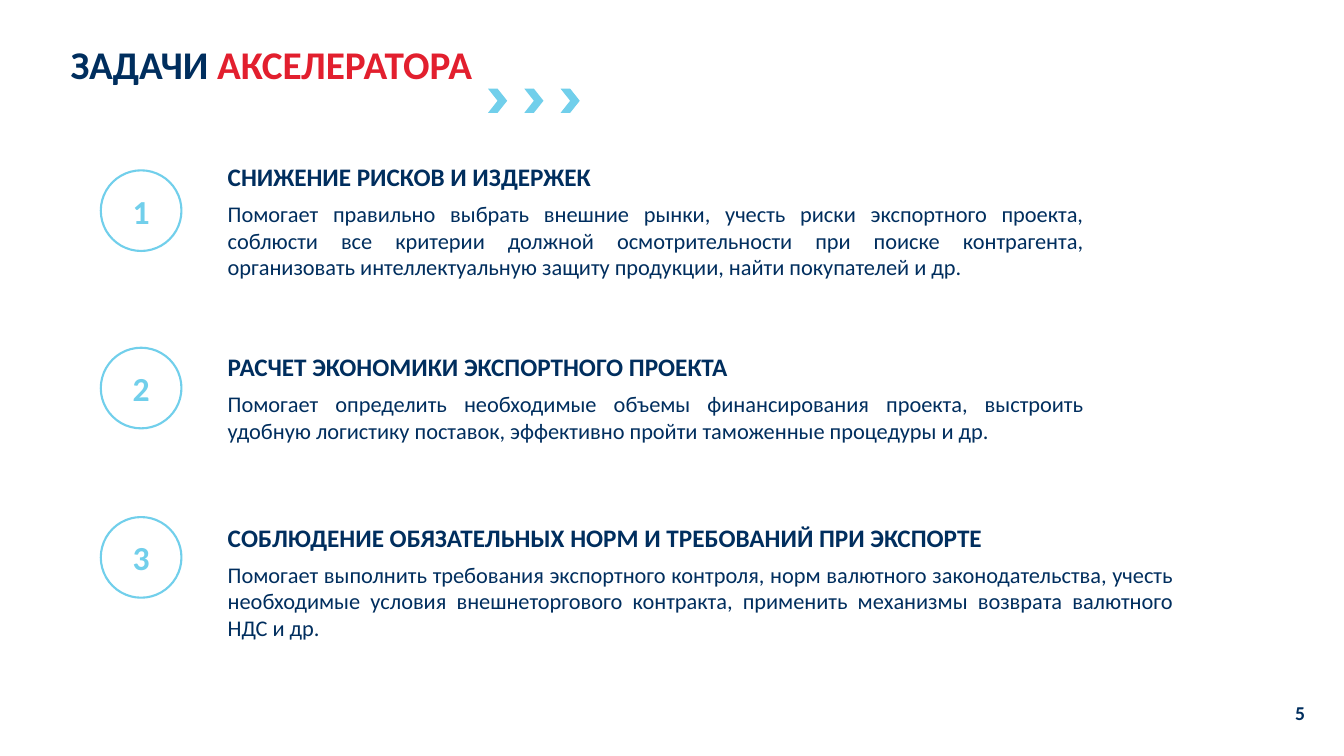
import dataclasses

import pptx
import pptx.dml.color
import pptx.enum.shapes
import pptx.enum.text
import pptx.util

ALIGN = pptx.enum.text.PP_ALIGN
ANCHOR = pptx.enum.text.MSO_ANCHOR
SHAPE = pptx.enum.shapes.MSO_SHAPE


@dataclasses.dataclass(frozen=True)
class Theme:
    font: str = "Calibri"
    navy: str = "002E5E"
    red: str = "E21F2E"
    sky: str = "71CFEB"
    title: int = 28
    number: int = 24
    heading: int = 18
    body: int = 16
    footer: int = 14


class SlideBuilder:
    EMU_PER_PX = 9144  # 100 px to the inch

    def __init__(self, page, theme):
        self.page = page
        self.theme = theme

    @classmethod
    def px(cls, *lengths):
        return [pptx.util.Emu(length * cls.EMU_PER_PX) for length in lengths]

    def style(self, para, size, color, bold=True, align=ALIGN.LEFT):
        para.alignment = align
        para.font.name = self.theme.font
        para.font.size = pptx.util.Pt(size)
        para.font.bold = bold
        para.font.color.rgb = pptx.dml.color.RGBColor.from_string(color)

    def text_box(self, left, top, width, height, inset=True):
        box = self.page.shapes.add_textbox(*self.px(left, top, width, height))
        frame = box.text_frame
        frame.word_wrap = True
        if not inset:
            frame.margin_left = frame.margin_right = 0
            frame.margin_top = frame.margin_bottom = 0
        return frame

    def shape(self, kind, left, top, width, height):
        shape = self.page.shapes.add_shape(kind, *self.px(left, top, width, height))
        shape.shadow.inherit = False
        return shape

    def title(self, plain, accent):
        frame = self.text_box(70, 42, 1040, 45, inset=False)
        frame.vertical_anchor = ANCHOR.BOTTOM
        para = frame.paragraphs[0]
        para.line_spacing = pptx.util.Pt(37)
        for text, color in ((plain, self.theme.navy), (accent, self.theme.red)):
            span = para.add_run()
            span.text = text
            span.font.name = self.theme.font
            span.font.size = pptx.util.Pt(self.theme.title)
            span.font.bold = True
            span.font.color.rgb = pptx.dml.color.RGBColor.from_string(color)

    def chevron(self, left, top):
        arrow = self.shape(SHAPE.CHEVRON, left, top, 19, 24)
        arrow.fill.solid()
        arrow.fill.fore_color.rgb = pptx.dml.color.RGBColor.from_string(self.theme.sky)
        arrow.line.fill.background()

    def number_badge(self, number, top):
        badge = self.shape(SHAPE.OVAL, 100, top, 80, 80)
        badge.fill.background()
        badge.line.color.rgb = pptx.dml.color.RGBColor.from_string(self.theme.sky)
        badge.line.width = pptx.util.Pt(1.5)
        badge.text_frame.vertical_anchor = ANCHOR.MIDDLE
        para = badge.text_frame.paragraphs[0]
        para.text = str(number)
        self.style(para, self.theme.number, self.theme.sky, align=ALIGN.CENTER)

    def task(self, top, width, height, heading, body):
        frame = self.text_box(216, top, width, height)
        para = frame.paragraphs[0]
        para.text = heading
        para.space_after = pptx.util.Pt(6)
        self.style(para, self.theme.heading, self.theme.navy, align=ALIGN.JUSTIFY)
        para = frame.add_paragraph()
        para.text = body
        self.style(para, self.theme.body, self.theme.navy, False, ALIGN.JUSTIFY)

    def page_number(self, number):
        para = self.text_box(1269, 695, 41, 38, inset=False).paragraphs[0]
        para.text = str(number)
        self.style(para, self.theme.footer, self.theme.navy, align=ALIGN.CENTER)


# Badge top, text top, text width, text height, heading, body
TASKS = [
    (169, 155, 869, 133, "СНИЖЕНИЕ РИСКОВ И ИЗДЕРЖЕК",
     "Помогает правильно выбрать внешние рынки, учесть риски экспортного проекта, "
     "соблюсти все критерии должной осмотрительности при поиске контрагента, "
     "организовать интеллектуальную защиту продукции, найти покупателей и др."),
    (345, 344, 869, 106, "РАСЧЕТ ЭКОНОМИКИ ЭКСПОРТНОГО ПРОЕКТА",
     "Помогает определить необходимые объемы финансирования проекта, выстроить "
     "удобную логистику поставок, эффективно пройти таможенные процедуры и др."),
    (513, 513, 958, 133, "СОБЛЮДЕНИЕ ОБЯЗАТЕЛЬНЫХ НОРМ И ТРЕБОВАНИЙ ПРИ ЭКСПОРТЕ",
     "Помогает выполнить требования экспортного контроля, норм валютного "
     "законодательства, учесть необходимые условия внешнеторгового контракта, "
     "применить механизмы возврата валютного НДС и др."),
]


def main():
    deck = pptx.Presentation()
    deck.slide_width, deck.slide_height = SlideBuilder.px(1333, 750)
    page = deck.slides.add_slide(deck.slide_layouts[6])
    builder = SlideBuilder(page, Theme())

    # Title and its chevrons
    builder.title("ЗАДАЧИ ", "АКСЕЛЕРАТОРА")
    for index in range(3):
        builder.chevron(484 + 36 * index, 88)

    # Numbered tasks
    for number, (badge_top, top, width, height, heading, body) in enumerate(TASKS, 1):
        builder.number_badge(number, badge_top)
        builder.task(top, width, height, heading, body)

    # Footer
    builder.page_number(5)
    deck.save("out.pptx")


if __name__ == "__main__":
    main()
